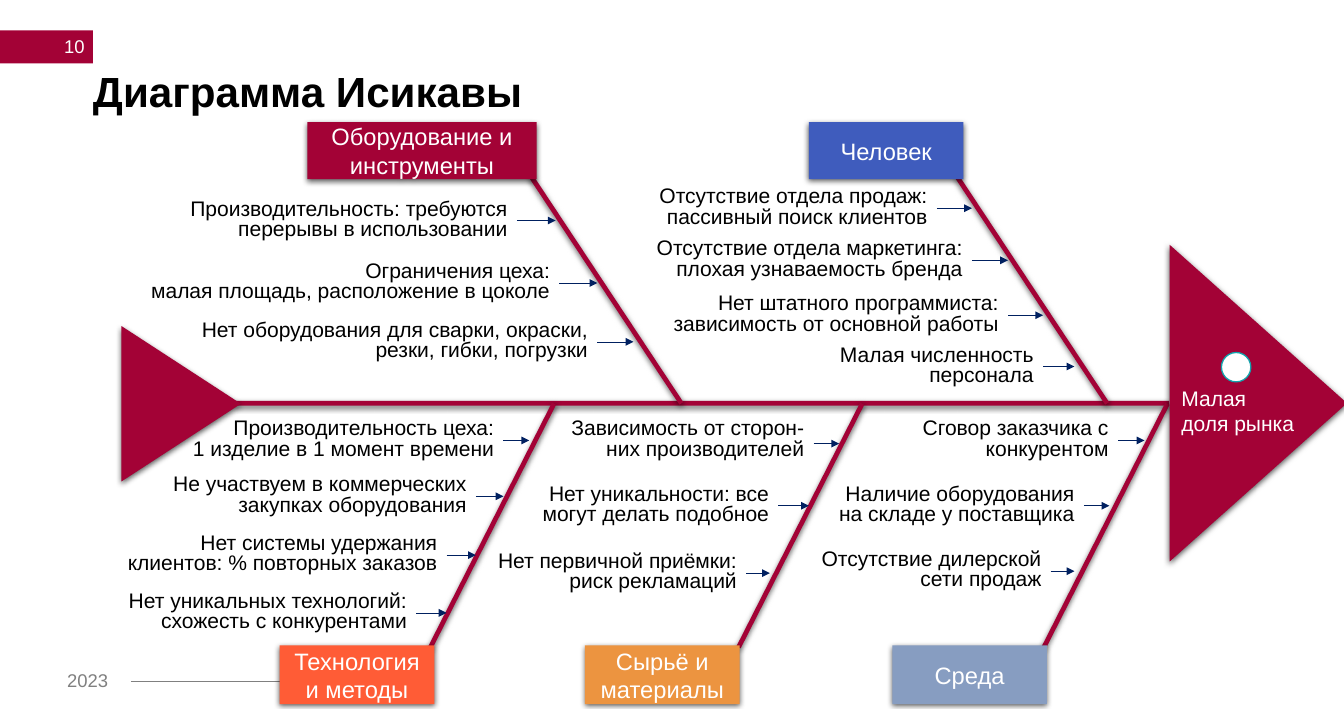
import copy
from dataclasses import dataclass

import lxml.etree
import pptx
import pptx.dml.color
import pptx.enum.shapes
import pptx.enum.text
import pptx.oxml.ns
import pptx.util

Pt = pptx.util.Pt
qn = pptx.oxml.ns.qn
Form = pptx.enum.shapes.MSO_SHAPE
Align = pptx.enum.text.PP_ALIGN
Anchor = pptx.enum.text.MSO_ANCHOR
Fit = pptx.enum.text.MSO_AUTO_SIZE


@dataclass(frozen=True)
class Theme:
    font: str = "Arial"
    bone: str = "A30236"
    arrow: str = "002060"
    muted: str = "808080"
    ring: str = "12A3AD"
    dark: str = "000000"
    light: str = "FFFFFF"
    title: int = 32
    category: int = 18
    cause: int = 16
    small: int = 14


@dataclass(frozen=True)
class Cause:
    left: float
    top: float
    right: float
    tip: float
    text: str
    drop: float = 19.2


@dataclass(frozen=True)
class Branch:
    name: str
    color: str
    left: float
    width: float
    bone_left: float
    causes: tuple


THEME = Theme()
UPPER = {"top": 92.9, "height": 43.2, "bone_top": 218.2, "angle": 56.5}
LOWER = {"top": 490.3, "height": 44.6, "bone_top": 397.4, "angle": 116.9}
BONE_LENGTH, BONE_WIDTH = 207.4, 3.6
CAUSE_HEIGHT = 38.2

UPPER_BRANCHES = (
    Branch("Оборудование и инструменты", THEME.bone, 233.3, 174.2, 356.4, (
        Cause(133.9, 148.3, 392.4, 421.9, "Производительность: требуются\nперерывы в использовании"),
        Cause(103, 195.8, 424.8, 453.6, "Ограничения цеха:\vмалая площадь, расположение в цоколе"),
        Cause(141.8, 240.5, 453.6, 481, "Нет оборудования для сварки, окраски,\vрезки, гибки, погрузки"),
    )),
    Branch("Человек", "3F5CBD", 614.2, 117.4, 679.7, (
        Cause(490.3, 139, 711.4, 738, "Отсутствие отдела продаж:\nпассивный поиск клиентов"),
        Cause(487.4, 178.6, 738, 765.4, "Отсутствие отдела маркетинга:\nплохая узнаваемость бренда"),
        Cause(500.4, 220.3, 765.4, 792, "Нет штатного программиста:\nзависимость от основной работы"),
        Cause(628.6, 259.2, 792, 815.8, "Малая численность\vперсонала"),
    )),
)
LOWER_BRANCHES = (
    Branch("Технология и методы", "FF5C36", 212.4, 117.4, 270, (
        Cause(136.1, 315.4, 382.3, 401.8, "Производительность цеха:\n1 изделие в 1 момент времени"),
        Cause(121, 357.8, 361.4, 382.3, "Не участвуем в коммерческих\nзакупках оборудования"),
        Cause(86.4, 402.5, 339.1, 361.4, "Нет системы удержания\nклиентов: % повторных заказов"),
        Cause(87.1, 446.4, 316.1, 339.1, "Нет уникальных технологий:\nсхожесть с конкурентами"),
    )),
    Branch("Сырьё и материалы", "EC9440", 444.2, 117.4, 504, (
        Cause(423.4, 315.4, 617.8, 637.2, "Зависимость от сторон-\nних производителей", 21.6),
        Cause(401.8, 365, 591.1, 614.2, "Нет уникальности: все\nмогут делать подобное"),
        Cause(367.9, 416.2, 566.6, 584.6, "Нет первичной приёмки:\nриск рекламаций"),
    )),
    Branch("Среда", "879DC1", 677.5, 117.4, 735.8, (
        Cause(691.2, 315.4, 848.9, 869, "Сговор заказчика с\nконкурентом"),
        Cause(627.8, 365, 823, 842.4, "Наличие оборудования\vна складе у поставщика"),
        Cause(614.2, 414.7, 797.8, 815.8, "Отсутствие дилерской\nсети продаж"),
    )),
)


def rgb(color):
    return pptx.dml.color.RGBColor.from_string(color)


def assign(target, values):
    for name, value in values.items():
        setattr(target, name, value)


def write(box, text, size, color, frame_format=None, para_format=None, bold=False):
    frame = box.text_frame
    frame.text = text
    assign(frame, {"word_wrap": True, **(frame_format or {})})
    for para in frame.paragraphs:
        assign(para, {"alignment": Align.LEFT, **(para_format or {})})
        for span in para.runs:
            assign(span.font, {"name": THEME.font, "size": Pt(size), "bold": bold})
            span.font.color.rgb = rgb(color)
        for line_break in para._p.findall(qn("a:br")):
            line_break.append(copy.deepcopy(para.runs[0]._r.rPr))


def add_label(page, place, text, size, color, **formats):
    box = page.shapes.add_textbox(*map(Pt, place))
    write(box, text, size, color, **formats)


def add_block(page, form, place, color, angle=0, shadow=True):
    block = page.shapes.add_shape(form, *map(Pt, place))
    block.rotation = angle
    block.fill.solid()
    block.fill.fore_color.rgb = rgb(color)
    block.line.fill.background()
    block.shadow.inherit = False
    if shadow:
        effects = block._element.spPr.find(qn("a:effectLst"))
        outer = lxml.etree.SubElement(
            effects, qn("a:outerShdw"), blurRad=str(Pt(4.5)), dist=str(Pt(1.5)),
            dir="5400000", algn="ctr", rotWithShape="0")
        tint = lxml.etree.SubElement(outer, qn("a:srgbClr"), val=THEME.dark)
        lxml.etree.SubElement(tint, qn("a:alpha"), val="63000")
    return block


def add_line(page, left, right, height, color, width, arrow=False):
    line = page.shapes.add_connector(
        pptx.enum.shapes.MSO_CONNECTOR.STRAIGHT, *map(Pt, (left, height, right, height)))
    line.line.color.rgb = rgb(color)
    line.line.width = Pt(width)
    if arrow:
        lxml.etree.SubElement(line.line._get_or_add_ln(), qn("a:tailEnd"), type="triangle")
    lxml.etree.SubElement(line._element.spPr, qn("a:effectLst"))


def add_cause(page, cause):
    place = (cause.left, cause.top, cause.right - cause.left, CAUSE_HEIGHT)
    add_label(page, place, cause.text, THEME.cause, THEME.dark,
              frame_format={"word_wrap": False, "auto_size": Fit.SHAPE_TO_FIT_TEXT},
              para_format={"alignment": Align.RIGHT, "line_spacing": 0.8})
    add_line(page, cause.right, cause.tip, cause.top + cause.drop, THEME.arrow, 0.5, arrow=True)


def add_branch(page, branch, side):
    add_block(page, Form.RECTANGLE, (branch.bone_left, side["bone_top"], BONE_LENGTH, BONE_WIDTH),
              THEME.bone, side["angle"])
    category = add_block(page, Form.RECTANGLE,
                         (branch.left, side["top"], branch.width, side["height"]), branch.color)
    write(category, branch.name, THEME.category, THEME.light,
          frame_format={"vertical_anchor": Anchor.MIDDLE}, para_format={"alignment": Align.CENTER})
    for cause in branch.causes:
        add_cause(page, cause)


def add_page_frame(page):
    add_block(page, Form.RECTANGLE, (0, 23, 70.6, 25.2), THEME.bone, shadow=False)
    add_label(page, (13, 20.9, 58.3, 28.8), "10", THEME.small, THEME.light,
              frame_format={"vertical_anchor": Anchor.MIDDLE}, para_format={"alignment": Align.RIGHT})
    add_label(page, (43.9, 504.7, 48.2, 24.5), "2023", THEME.small, THEME.muted)
    add_line(page, 99.4, 280.8, 517.7, THEME.muted, 1.5)
    margins = dict.fromkeys(("margin_left", "margin_top", "margin_right", "margin_bottom"), 0)
    add_label(page, (70.6, 54, 893.5, 56.2), "Диаграмма Исикавы", THEME.title, THEME.dark,
              frame_format=margins, para_format={"line_spacing": 0.9}, bold=True)


def add_head(page):
    add_block(page, Form.ISOSCELES_TRIANGLE, (835.2, 239, 240.5, 134.6), THEME.bone, 90)
    eye = add_block(page, Form.OVAL, (927.4, 267.8, 22.3, 22.3), THEME.light, shadow=False)
    eye.line.color.rgb = rgb(THEME.ring)
    eye.line.width = Pt(1)
    add_label(page, (889.9, 289.4, 101.5, 46.1), "Малая\nдоля рынка", THEME.cause, THEME.light,
              frame_format={"word_wrap": False, "auto_size": Fit.SHAPE_TO_FIT_TEXT})


def main():
    deck = pptx.Presentation()
    assign(deck, {"slide_width": Pt(1020.47), "slide_height": Pt(538.58)})
    page = deck.slides.add_slide(deck.slide_layouts[6])
    add_page_frame(page)
    add_block(page, Form.RECTANGLE, (178.6, 304.6, 709.2, BONE_WIDTH), THEME.bone)
    add_block(page, Form.ISOSCELES_TRIANGLE, (78.5, 261.4, 118.1, 90.7), THEME.bone, 90)
    for branches, side in ((UPPER_BRANCHES, UPPER), (LOWER_BRANCHES, LOWER)):
        for branch in branches:
            add_branch(page, branch, side)
    add_head(page)
    deck.save("out.pptx")


if __name__ == "__main__":
    main()
